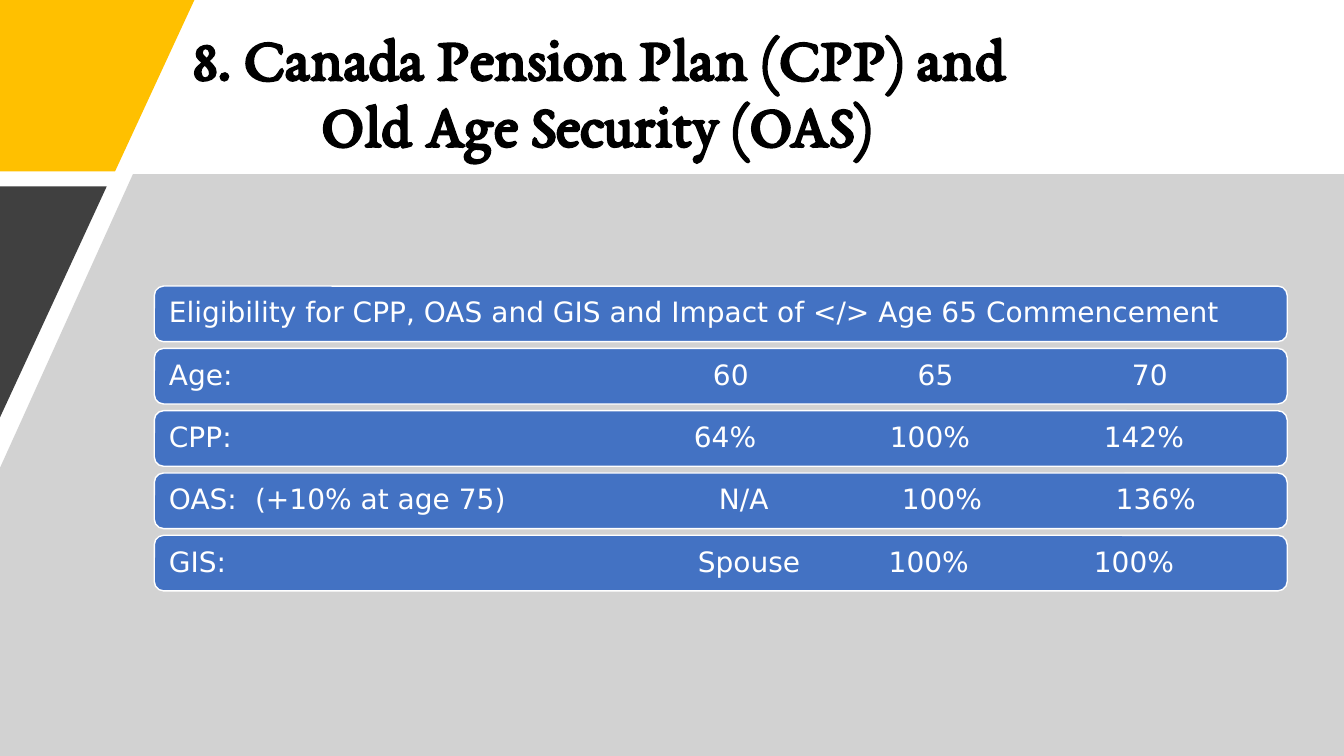
import pptx
import pptx.util
import pptx.dml.color
import pptx.enum.shapes
import pptx.enum.text
import pptx.oxml
import pptx.oxml.ns

Cm, Pt = pptx.util.Cm, pptx.util.Pt

WIDE, HIGH = 33.87, 19.05

# Title lines with their left indents in cm
TITLE = [("8. Canada Pension Plan (CPP) and", 0),
         ("Old Age Security (OAS)", 3.23)]

# Cells of each bar and the tab stops (cm) of all cells after the first
ROWS = [
    (["Eligibility for CPP, OAS and GIS and Impact of </> Age 65 Commencement"],
     []),
    (["Age:", "60", "65", "70"], [13.71, 18.87, 24.27]),
    (["CPP:", "64%", "100%", "142%"], [13.23, 18.17, 23.56]),
    (["OAS:", "(+10% at age 75)", "N/A", "100%", "136%"],
     [2.17, 13.86, 18.47, 23.86]),
    (["GIS:", "Spouse", "100%", "100%"], [13.33, 18.14, 23.31]),
]

# Background panels: corner points in cm, colour, opacity in percent
PANELS = [
    ([(0, 0), (4.9, 0), (2.9, 4.32), (0, 4.32)], "FFC000", 100),
    ([(3.35, 4.39), (WIDE, 4.39), (WIDE, HIGH), (0, HIGH), (0, 11.79)],
     "A6A6A6", 50),
    ([(0, 4.7), (2.69, 4.7), (0, 10.52)], "404040", 100),
]

BAR = {"left": 3.89, "top": 7.21, "width": 28.55, "height": 1.4}
PITCH = 1.57

HEAD_FONT = {"name": "EB Garamond", "size": Pt(44), "bold": True}
BAR_FONT = {"name": "DejaVu Sans", "size": Pt(20), "bold": False}
HEAD_FRAME = {
    "word_wrap": True,
    "auto_size": pptx.enum.text.MSO_AUTO_SIZE.NONE,
    "vertical_anchor": pptx.enum.text.MSO_ANCHOR.MIDDLE,
}
BAR_FRAME = {**HEAD_FRAME, "margin_left": Cm(0.3), "margin_right": Cm(0.3),
             "margin_top": Cm(0.23), "margin_bottom": Cm(0.23)}
PARA = {"alignment": pptx.enum.text.PP_ALIGN.LEFT, "line_spacing": 0.9}


def rgb(code):
    return pptx.dml.color.RGBColor.from_string(code)


def apply(item, values):
    for name, value in values.items():
        setattr(item, name, value)


def paint(shape, code):
    shape.shadow.inherit = False
    shape.fill.solid()
    shape.fill.fore_color.rgb = rgb(code)


def write(para, text, font, code):
    apply(para, PARA)
    run = para.add_run()
    run.text = text
    apply(run.font, font)
    run.font.color.rgb = rgb(code)


def fade(shape, percent):
    """Set the opacity of a solid fill."""
    color = shape.fill._xPr.find(".//" + pptx.oxml.ns.qn("a:srgbClr"))
    color.append(pptx.oxml.parse_xml(
        f'<a:alpha {pptx.oxml.ns.nsdecls("a")} val="{percent * 1000}"/>'))


def set_tabs(para, stops):
    marks = "".join(f'<a:tab pos="{int(Cm(stop))}" algn="l"/>' for stop in stops)
    para._p.get_or_add_pPr().append(pptx.oxml.parse_xml(
        f'<a:tabLst {pptx.oxml.ns.nsdecls("a")}>{marks}</a:tabLst>'))


def add_panel(slide, points, code, percent):
    spots = [(Cm(x), Cm(y)) for x, y in points]
    path = slide.shapes.build_freeform(*spots[0])
    path.add_line_segments(spots[1:], close=True)
    panel = path.convert_to_shape()
    paint(panel, code)
    panel.line.fill.background()
    if percent < 100:
        fade(panel, percent)


def add_title(slide):
    title = slide.shapes.title
    apply(title, {"left": Cm(4.6), "top": Cm(0.71),
                  "width": Cm(26.01), "height": Cm(3.3)})
    frame = title.text_frame
    apply(frame, HEAD_FRAME)
    for i, (line, indent) in enumerate(TITLE):
        para = frame.add_paragraph() if i else frame.paragraphs[0]
        write(para, line, HEAD_FONT, "000000")
        para._p.get_or_add_pPr().set("marL", str(int(Cm(indent))))


def add_bar(slide, index, cells, stops):
    bar = slide.shapes.add_shape(
        pptx.enum.shapes.MSO_SHAPE.ROUNDED_RECTANGLE,
        Cm(BAR["left"]), Cm(BAR["top"] + index * PITCH),
        Cm(BAR["width"]), Cm(BAR["height"]))
    bar.adjustments[0] = 0.167
    paint(bar, "4372C3")
    bar.line.color.rgb = rgb("FFFFFF")
    bar.line.width = Pt(1)
    apply(bar.text_frame, BAR_FRAME)
    para = bar.text_frame.paragraphs[0]
    write(para, "\t".join(cells), BAR_FONT, "FFFFFF")
    if stops:
        set_tabs(para, stops)


def main():
    deck = pptx.Presentation()
    deck.slide_width, deck.slide_height = Cm(WIDE), Cm(HIGH)
    slide = deck.slides.add_slide(deck.slide_layouts.get_by_name("Title Only"))
    for points, code, percent in PANELS:
        add_panel(slide, points, code, percent)
    add_title(slide)
    for index, (cells, stops) in enumerate(ROWS):
        add_bar(slide, index, cells, stops)
    deck.save("out.pptx")


if __name__ == "__main__":
    main()
